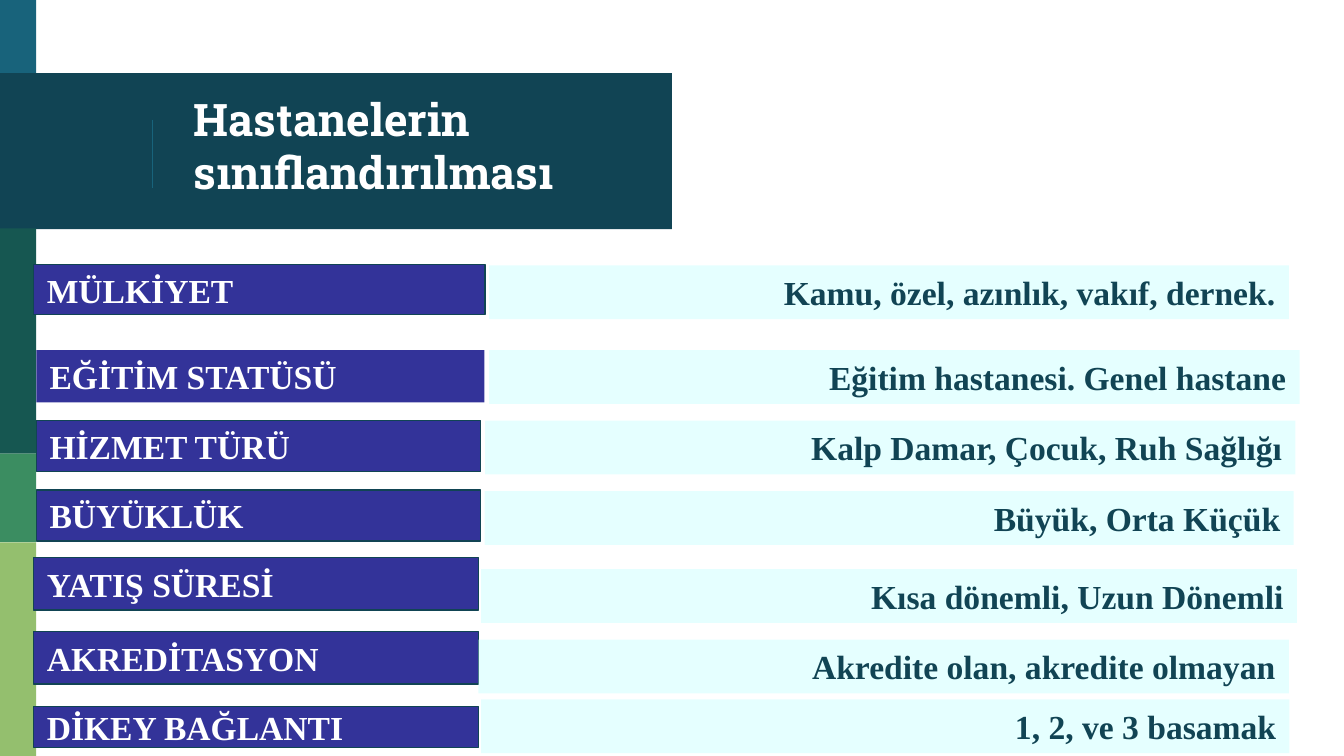
import dataclasses
import typing

import lxml.etree
import pptx
import pptx.dml.color
import pptx.enum.shapes
import pptx.enum.text
import pptx.oxml.ns
import pptx.util

RGB = pptx.dml.color.RGBColor
ALIGN = pptx.enum.text.PP_ALIGN
ANCHOR = pptx.enum.text.MSO_ANCHOR
FIT = pptx.enum.text.MSO_AUTO_SIZE

BLUE = RGB(0x18, 0x63, 0x7B)
NAVY = RGB(0x11, 0x44, 0x54)
TEAL = RGB(0x16, 0x57, 0x51)
GREEN = RGB(0x3B, 0x8D, 0x61)
LIME = RGB(0x94, 0xBF, 0x6E)
INDIGO = RGB(0x33, 0x33, 0x99)
AQUA = RGB(0xCC, 0xFF, 0xFF)
WHITE = RGB(0xFF, 0xFF, 0xFF)

SCALE = 4572


@dataclasses.dataclass(frozen=True)
class Box:
    left: int
    top: int
    width: int
    height: int

    def emu(self) -> tuple[int, ...]:
        return tuple(n * SCALE for n in dataclasses.astuple(self))


@dataclasses.dataclass(frozen=True)
class Band:
    box: Box
    color: RGB


@dataclasses.dataclass(frozen=True)
class Row:
    label: str
    left: Box
    value: str
    right: Box
    edge: bool = True


BANDS = [
    Band(Box(0, 0, 54, 116), BLUE),
    Band(Box(0, 109, 1000, 232), NAVY),
    Band(Box(0, 340, 54, 335), TEAL),
    Band(Box(0, 675, 54, 132), GREEN),
    Band(Box(0, 807, 54, 318), LIME),
]

ROWS = [
    Row("MÜLKİYET", Box(50, 394, 672, 74),
        "Kamu, özel, azınlık, vakıf, dernek.", Box(728, 395, 1190, 80)),
    Row("EĞİTİM STATÜSÜ", Box(54, 521, 667, 78),
        "Eğitim hastanesi. Genel hastane", Box(728, 521, 1206, 80), False),
    Row("HİZMET TÜRÜ", Box(54, 626, 661, 76),
        "Kalp Damar, Çocuk, Ruh Sağlığı", Box(722, 626, 1206, 80)),
    Row("BÜYÜKLÜK", Box(54, 729, 661, 76),
        "Büyük, Orta Küçük", Box(721, 731, 1204, 80)),
    Row("YATIŞ SÜRESİ", Box(50, 830, 662, 78),
        "Kısa dönemli, Uzun Dönemli", Box(716, 847, 1214, 80)),
    Row("AKREDİTASYON", Box(50, 940, 662, 78),
        "Akredite olan, akredite olmayan", Box(712, 952, 1206, 80)),
    Row("DİKEY BAĞLANTI", Box(50, 1051, 662, 61),
        "1, 2, ve 3 basamak", Box(716, 1041, 1203, 80)),
]


def add_rect(slide: typing.Any, box: Box, color: RGB) -> typing.Any:
    shape = slide.shapes.add_shape(
        pptx.enum.shapes.MSO_SHAPE.RECTANGLE, *box.emu())
    shape.shadow.inherit = False
    shape.fill.solid()
    shape.fill.fore_color.rgb = color
    shape.line.fill.background()
    return shape


def set_text(shape: typing.Any, text: str, face: str, size: int,
             color: RGB, align: ALIGN) -> None:
    shape.text_frame.text = text
    para = shape.text_frame.paragraphs[0]
    para.alignment = align
    para.font.name = face
    para.font.size = pptx.util.Pt(size)
    para.font.bold = True
    para.font.color.rgb = color


def add_label(slide: typing.Any, row: Row) -> None:
    shape = add_rect(slide, row.left, INDIGO)
    if row.edge:
        shape.line.color.rgb = NAVY
        shape.line.width = pptx.util.Pt(0.75)
    set_text(shape, row.label, "Times New Roman", 18, WHITE, ALIGN.LEFT)
    shape.text_frame.word_wrap = False
    shape.text_frame.vertical_anchor = ANCHOR.MIDDLE


def add_value(slide: typing.Any, row: Row) -> None:
    shape = add_rect(slide, row.right, AQUA)
    tint = shape.element.spPr.find(".//" + pptx.oxml.ns.qn("a:srgbClr"))
    lxml.etree.SubElement(tint, pptx.oxml.ns.qn("a:alpha"), val="50000")
    set_text(shape, row.value, "Times New Roman", 18, NAVY, ALIGN.RIGHT)
    frame = shape.text_frame
    frame.word_wrap = True
    frame.vertical_anchor = ANCHOR.TOP
    frame.auto_size = FIT.SHAPE_TO_FIT_TEXT


def add_rule(slide: typing.Any, x: int, top: int, end: int) -> None:
    line = slide.shapes.add_connector(
        pptx.enum.shapes.MSO_CONNECTOR.STRAIGHT,
        x * SCALE, top * SCALE, x * SCALE, end * SCALE)
    line.line.color.rgb = BLUE
    line.line.width = pptx.util.Pt(0.75)
    lxml.etree.SubElement(
        line.element.spPr, pptx.oxml.ns.qn("a:effectLst"))


def set_title(slide: typing.Any, text: str, box: Box) -> None:
    title = slide.shapes.title
    title.left, title.top, title.width, title.height = box.emu()
    set_text(title, text, "Roboto Slab", 24, WHITE, ALIGN.LEFT)
    frame = title.text_frame
    frame.word_wrap = True
    frame.auto_size = FIT.NONE
    frame.vertical_anchor = ANCHOR.MIDDLE
    inset = 20 * SCALE
    frame.margin_left = frame.margin_right = inset
    frame.margin_top = frame.margin_bottom = inset
    title.element.getparent().append(title.element)


def main() -> None:
    deck = pptx.Presentation()
    deck.slide_width = 2000 * SCALE
    deck.slide_height = 1125 * SCALE
    slide = deck.slides.add_slide(deck.slide_layouts[5])
    for band in BANDS:
        add_rect(slide, band.box, band.color)
    add_rule(slide, 227, 178, 280)
    set_title(slide, "Hastanelerin sınıflandırılması", Box(268, 122, 714, 188))
    for row in ROWS[1:] + ROWS[:1]:
        add_label(slide, row)
    for row in ROWS:
        add_value(slide, row)
    deck.save("out.pptx")


if __name__ == "__main__":
    main()
